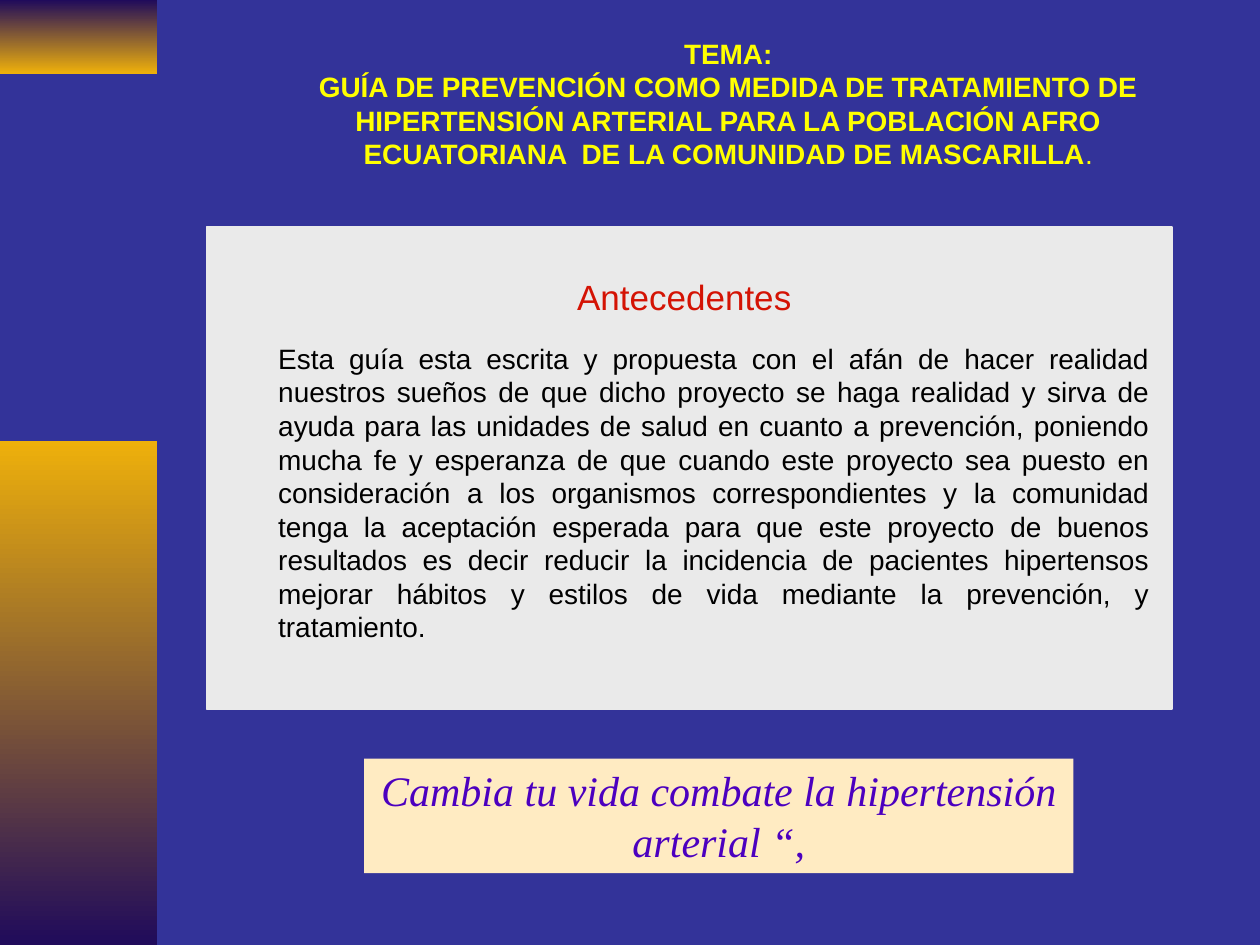
"""Build a slide presenting the background of a hypertension prevention guide."""
from dataclasses import dataclass

from pptx import Presentation
from pptx.dml.color import RGBColor
from pptx.enum.shapes import MSO_SHAPE
from pptx.enum.text import MSO_ANCHOR, PP_ALIGN
from pptx.shapes.autoshape import Shape
from pptx.slide import Slide
from pptx.util import Pt

LINE_FACTOR = 1.2
BACKGROUND = "333399"
GOLD = "EEB00B"
INDIGO = "200B5B"
PANEL_GREY = "EAEAEA"


@dataclass(frozen=True)
class Box:
    """A rectangle in points."""
    left: float
    top: float
    width: float
    height: float


@dataclass(frozen=True)
class Band:
    """A side band shaded from top to bottom."""
    box: Box
    top_color: str
    bottom_color: str


@dataclass(frozen=True)
class Words:
    """Text with its look; each paragraph is a tuple of (text, bold) runs."""
    paragraphs: tuple[tuple[tuple[str, bool], ...], ...]
    size: float
    color: str
    font: str = "Arial"
    italic: bool = False
    align: PP_ALIGN = PP_ALIGN.CENTER
    anchor: MSO_ANCHOR = MSO_ANCHOR.TOP
    wrap: bool = True
    top_inset: float = 3.6


BANDS = (
    Band(Box(0, 0, 90, 42), INDIGO, GOLD),
    Band(Box(0, 252, 90, 288), GOLD, INDIGO),
)

TITLE_BOX = Box(140.4, 16.56, 551.52, 84.96)
TITLE = Words(
    (
        (("TEMA:", True),),
        (
            ("GUÍA DE PREVENCIÓN COMO MEDIDA DE TRATAMIENTO DE HIPERTENSIÓN "
             "ARTERIAL PARA LA POBLACIÓN AFRO ECUATORIANA  DE LA COMUNIDAD "
             "DE MASCARILLA", True),
            (".", False),
        ),
    ),
    16, "FFFF00", anchor=MSO_ANCHOR.MIDDLE,
)

PANEL_BOX = Box(118.08, 129.6, 551.52, 275.76)
HEADING = Words((((("Antecedentes ", False)),),), 20, "D41304",
                wrap=False, top_inset=27.6)

BODY_BOX = Box(151.92, 191.52, 511.92, 203.76)
BODY = Words(
    (((
        "Esta guía esta escrita y propuesta con el afán de hacer realidad "
        "nuestros sueños de que dicho proyecto se haga realidad y sirva de "
        "ayuda para las unidades de salud en cuanto a prevención, poniendo "
        "mucha fe y esperanza de que cuando este proyecto sea puesto en "
        "consideración a los organismos correspondientes y la comunidad "
        "tenga la aceptación esperada para que este proyecto de buenos "
        "resultados es decir reducir la incidencia de pacientes hipertensos "
        "mejorar hábitos y estilos de vida mediante la prevención, y "
        "tratamiento.", False),),),
    16, "000000", align=PP_ALIGN.JUSTIFY,
)

SLOGAN_BOX = Box(208.08, 433.44, 405.36, 65.52)
SLOGAN = Words(
    ((("Cambia tu vida combate la hipertensión arterial “,", False),),),
    24, "4C00BF", font="Times New Roman", italic=True,
)


def rgb(value: str) -> RGBColor:
    """Turn a hex string into a colour."""
    return RGBColor.from_string(value)


def place(box: Box) -> tuple[Pt, Pt, Pt, Pt]:
    """Give the position and size of a box as lengths."""
    return Pt(box.left), Pt(box.top), Pt(box.width), Pt(box.height)


def add_rectangle(slide: Slide, box: Box) -> Shape:
    """Add a rectangle without shadow or outline."""
    shape = slide.shapes.add_shape(MSO_SHAPE.RECTANGLE, *place(box))
    shape.shadow.inherit = False
    shape.line.fill.background()
    return shape


def add_panel(slide: Slide, box: Box, color: str) -> Shape:
    """Add a rectangle of one colour."""
    shape = add_rectangle(slide, box)
    shape.fill.solid()
    shape.fill.fore_color.rgb = rgb(color)
    return shape


def add_band(slide: Slide, band: Band) -> None:
    """Add a band with a vertical gradient."""
    shape = add_rectangle(slide, band.box)
    shape.fill.gradient()
    shape.fill.gradient_angle = 270
    colors = (band.top_color, band.bottom_color)
    for stop, color, position in zip(shape.fill.gradient_stops, colors, (0, 1)):
        stop.color.rgb = rgb(color)
        stop.position = position


def write(shape: Shape, words: Words) -> None:
    """Fill a shape with formatted text."""
    frame = shape.text_frame
    frame.word_wrap = words.wrap
    frame.vertical_anchor = words.anchor
    frame.margin_top = Pt(words.top_inset)
    for index, runs in enumerate(words.paragraphs):
        paragraph = frame.add_paragraph() if index else frame.paragraphs[0]
        paragraph.alignment = words.align
        paragraph.line_spacing = Pt(words.size * LINE_FACTOR)
        paragraph.font.name = words.font
        paragraph.font.size = Pt(words.size)
        paragraph.font.italic = words.italic
        paragraph.font.color.rgb = rgb(words.color)
        for text, bold in runs:
            run = paragraph.add_run()
            run.text = text
            run.font.bold = bold


def main() -> None:
    """Build and save the presentation."""
    presentation = Presentation()
    presentation.slide_width, presentation.slide_height = Pt(720), Pt(540)
    slide = presentation.slides.add_slide(presentation.slide_layouts[6])
    slide.background.fill.solid()
    slide.background.fill.fore_color.rgb = rgb(BACKGROUND)

    for band in BANDS:
        add_band(slide, band)
    write(slide.shapes.add_textbox(*place(TITLE_BOX)), TITLE)

    panel = add_panel(slide, PANEL_BOX, PANEL_GREY)
    panel.line.color.rgb = rgb(PANEL_GREY)
    panel.line.width = Pt(1)
    write(panel, HEADING)
    write(slide.shapes.add_textbox(*place(BODY_BOX)), BODY)
    write(add_panel(slide, SLOGAN_BOX, "FFEBC2"), SLOGAN)

    presentation.save("out.pptx")


if __name__ == "__main__":
    main()
